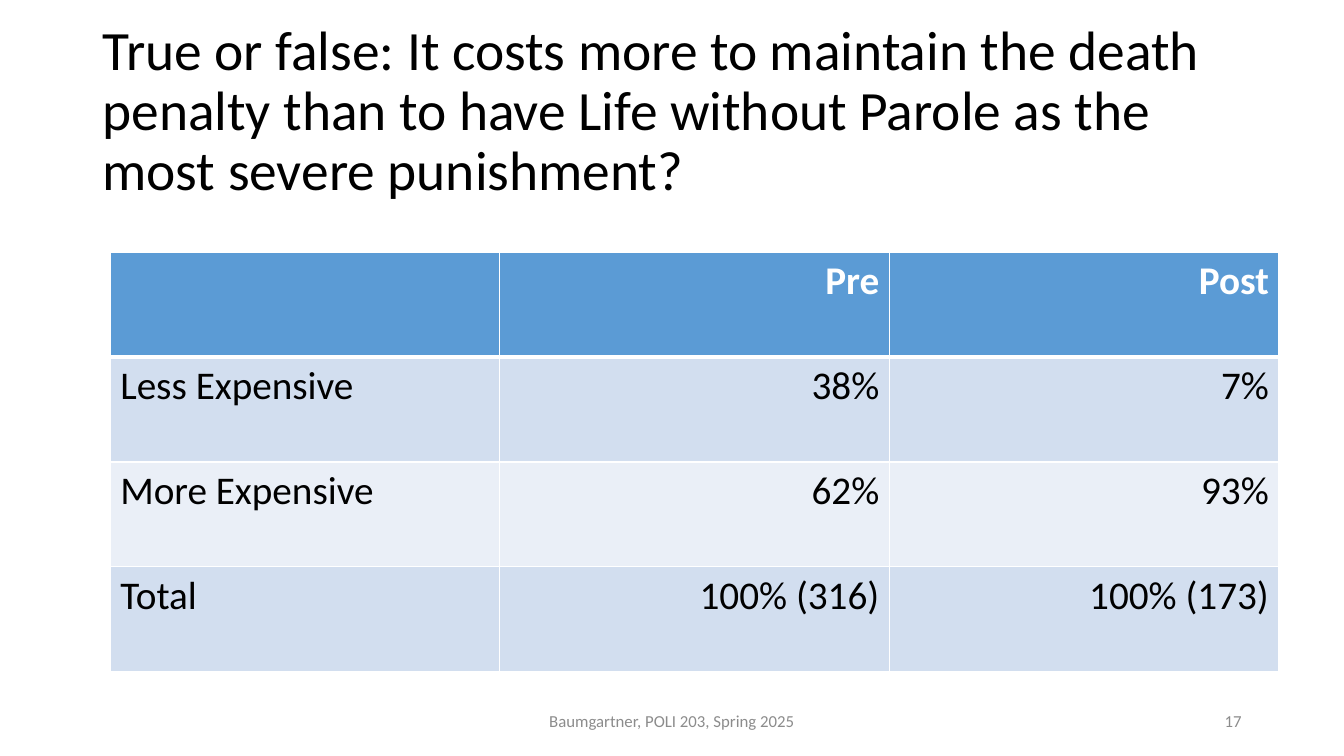
from dataclasses import dataclass

from lxml import etree
from pptx import Presentation
from pptx.dml.color import RGBColor
from pptx.enum.text import MSO_ANCHOR, MSO_AUTO_SIZE, PP_ALIGN
from pptx.oxml.ns import qn
from pptx.util import Pt

LEFT, CENTER, RIGHT = PP_ALIGN.LEFT, PP_ALIGN.CENTER, PP_ALIGN.RIGHT
MIDDLE = MSO_ANCHOR.MIDDLE
NO_AUTOFIT = MSO_AUTO_SIZE.NONE
TITLE_ONLY = 5
EMU_PER_PX = 9525
SLIDE_SIZE = (1280, 720)


@dataclass(frozen=True)
class Theme:
    font: str = "Calibri"
    ink: str = "000000"
    muted: str = "8C8C8C"
    white: str = "FFFFFF"
    header: str = "5B9BD5"
    bands: tuple = ("D2DEEF", "EAEFF7")
    title_size: float = 39.6
    table_size: int = 28
    footer_size: int = 12
    rule: int = 1
    header_rule: int = 3


THEME = Theme()

QUESTION = ("True or false: It costs more to maintain the death penalty than "
            "to have Life without Parole as the most severe punishment?")
ANSWERS = (
    ("", "Pre", "Post"),
    ("Less Expensive", "38%", "7%"),
    ("More Expensive", "62%", "93%"),
    ("Total", "100% (316)", "100% (173)"),
)


def px(*lengths):
    return [length * EMU_PER_PX for length in lengths]


def apply(target, formats):
    for name, value in formats.items():
        setattr(target, name, value)


def write(frame, text, size, color, align, bold=False):
    paragraph = frame.paragraphs[0]
    paragraph.alignment = align
    run = paragraph.add_run()
    run.text = text
    apply(run.font, {"name": THEME.font, "size": Pt(size), "bold": bold})
    run.font.color.rgb = RGBColor.from_string(color)
    return paragraph


def add_title(slide, box):
    title = slide.shapes.title
    apply(title, dict(zip(("left", "top", "width", "height"), px(*box))))
    apply(title.text_frame, {"word_wrap": True, "auto_size": NO_AUTOFIT,
                             "vertical_anchor": MIDDLE})
    paragraph = write(title.text_frame, QUESTION, THEME.title_size, THEME.ink, LEFT)
    paragraph.line_spacing = 0.9


def set_borders(cell, widths):
    properties = cell._tc.get_or_add_tcPr()
    for side, points in widths.items():
        line = etree.SubElement(properties, qn(f"a:ln{side}"), w=str(Pt(points)))
        fill = etree.SubElement(line, qn("a:solidFill"))
        etree.SubElement(fill, qn("a:srgbClr"), val=THEME.white)


def add_answers(slide, box):
    rows, columns = len(ANSWERS), len(ANSWERS[0])
    table = slide.shapes.add_table(rows, columns, *px(*box)).table
    for row, answer in enumerate(ANSWERS):
        is_header = row == 0
        fill = THEME.header if is_header else THEME.bands[(row - 1) % 2]
        color = THEME.white if is_header else THEME.ink
        # The thick rule lies between the header and the first answer
        widths = {"L": THEME.rule, "R": THEME.rule,
                  "T": THEME.header_rule if row == 1 else THEME.rule,
                  "B": THEME.header_rule if is_header else THEME.rule}
        for column, value in enumerate(answer):
            cell = table.cell(row, column)
            set_borders(cell, widths)
            cell.fill.solid()
            cell.fill.fore_color.rgb = RGBColor.from_string(fill)
            if value:
                write(cell.text_frame, value, THEME.table_size, color,
                      RIGHT if column else LEFT, is_header)


def add_footer(slide, box):
    left, top, width, height = box
    course_width, number_width = 432, 288
    parts = (
        ("Baumgartner, POLI 203, Spring 2025", CENTER,
         left + (width - course_width) // 2, course_width),
        ("17", RIGHT, left + width - number_width, number_width),
    )
    for text, align, part_left, part_width in parts:
        frame = slide.shapes.add_textbox(*px(part_left, top, part_width, height)).text_frame
        apply(frame, {"word_wrap": True, "vertical_anchor": MIDDLE})
        write(frame, text, THEME.footer_size, THEME.muted, align)


def main():
    deck = Presentation()
    deck.slide_width, deck.slide_height = px(*SLIDE_SIZE)
    slide = deck.slides.add_slide(deck.slide_layouts[TITLE_ONLY])
    add_title(slide, (88, 38, 1104, 139))
    add_answers(slide, (105, 240, 1113, 400))
    add_footer(slide, (88, 667, 1104, 38))
    deck.save("out.pptx")


if __name__ == "__main__":
    main()
